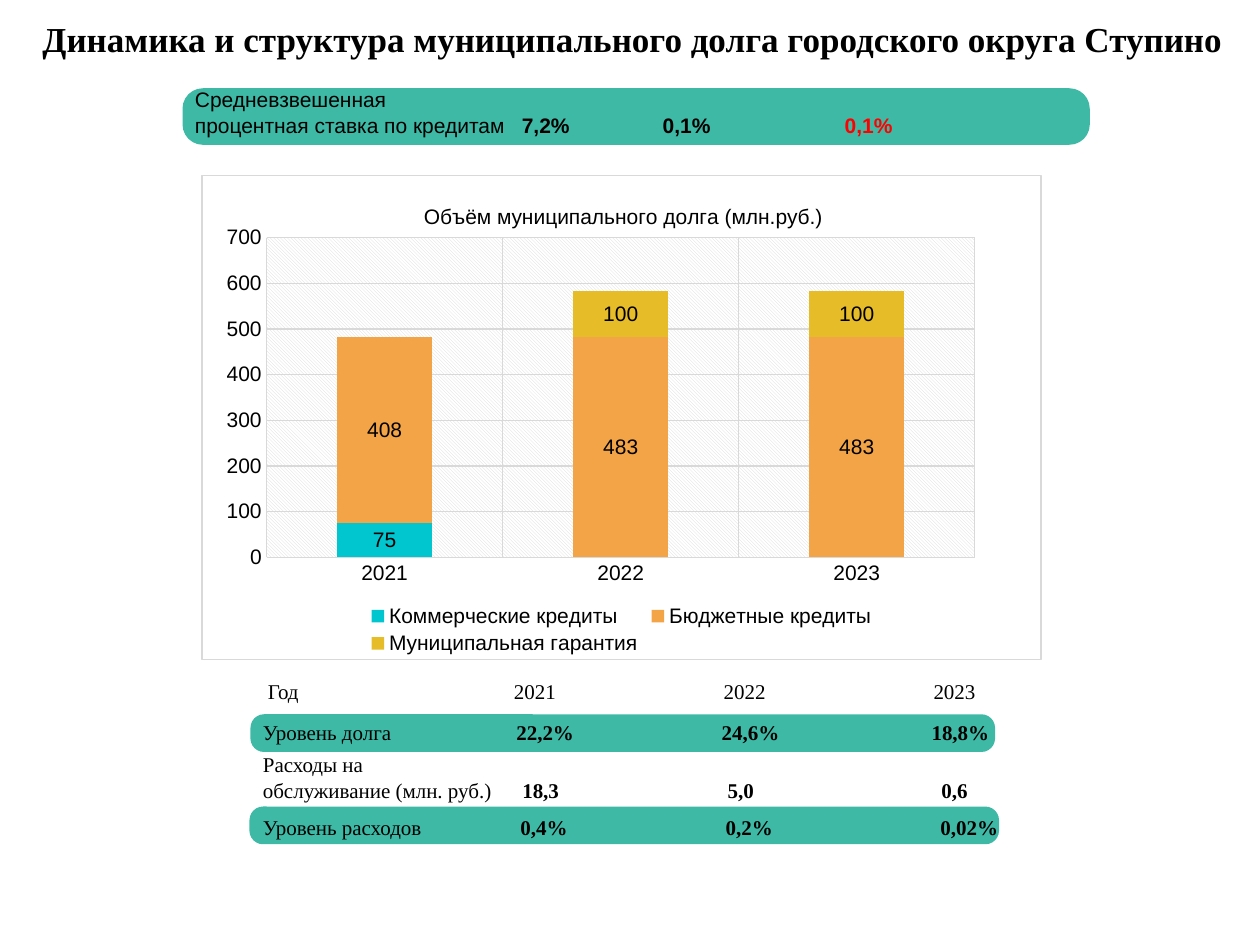
from lxml import etree
from pptx import Presentation
from pptx.chart.data import CategoryChartData
from pptx.dml.color import RGBColor
from pptx.enum.chart import XL_CHART_TYPE, XL_LABEL_POSITION, XL_LEGEND_POSITION, XL_TICK_MARK
from pptx.enum.shapes import MSO_SHAPE
from pptx.enum.text import MSO_AUTO_SIZE, PP_ALIGN
from pptx.oxml import parse_xml
from pptx.oxml.ns import nsdecls, qn
from pptx.util import Cm, Pt

STACKED = XL_CHART_TYPE.COLUMN_STACKED
LABEL_CENTER = XL_LABEL_POSITION.CENTER
LEGEND_BOTTOM = XL_LEGEND_POSITION.BOTTOM
NO_TICK = XL_TICK_MARK.NONE
ROUNDED = MSO_SHAPE.ROUNDED_RECTANGLE
GROW = MSO_AUTO_SIZE.SHAPE_TO_FIT_TEXT
CENTER = PP_ALIGN.CENTER

COLORS = {
    "text": "000000",
    "accent": "FF0000",
    "band": "3EB9A5",
    "paper": "FFFFFF",
    "grid": "D9D9D9",
    "commercial": "01C5CF",
    "budget": "F3A447",
    "guarantee": "E7BC29",
}
SANS = "Arial"
SERIF = "Times New Roman"


def color(name):
    return RGBColor.from_string(COLORS[name])


class DebtSlide:
    """Builds the elements of one slide in a shared style."""

    def __init__(self, presentation):
        self.slide = presentation.slides.add_slide(presentation.slide_layouts[6])
        self.shapes = self.slide.shapes

    def start_group(self):
        self.shapes = self.slide.shapes.add_group_shape().shapes

    def end_group(self):
        self.shapes = self.slide.shapes

    def style_font(self, font, name, size=12, bold=False, tone="text"):
        font.name = name
        font.size = Pt(size)
        font.bold = bold
        font.color.rgb = color(tone)

    def band(self, left, top, width, height):
        shape = self.shapes.add_shape(ROUNDED, Cm(left), Cm(top), Cm(width), Cm(height))
        shape.adjustments[0] = 0.36
        shape.shadow.inherit = False
        shape.fill.solid()
        shape.fill.fore_color.rgb = color("band")
        shape.line.fill.background()

    def text(self, left, top, width, height, rows, font_name, size=12, alignment=None):
        box = self.shapes.add_textbox(Cm(left), Cm(top), Cm(width), Cm(height))
        frame = box.text_frame
        frame.word_wrap = True
        frame.auto_size = GROW
        for index, (runs, stops, space) in enumerate(rows):
            paragraph = frame.paragraphs[0] if index == 0 else frame.add_paragraph()
            if stops:
                tabs = etree.SubElement(paragraph._p.get_or_add_pPr(), qn("a:tabLst"))
                for stop in stops:
                    etree.SubElement(tabs, qn("a:tab"), pos=str(int(Cm(stop))), algn="l")
            if space:
                paragraph.space_before = Pt(space)
            paragraph.alignment = alignment
            for content, bold, tone in runs:
                run = paragraph.add_run()
                run.text = content
                self.style_font(run.font, font_name, size, bold, tone)

    def set_layout(self, parent, **places):
        for old in parent.findall(qn("c:layout")):
            parent.remove(old)
        layout = parse_xml(f"<c:layout {nsdecls('c')}><c:manualLayout/></c:layout>")
        for tag, value in places.items():
            etree.SubElement(layout[0], qn(f"c:{tag}"), val=str(value))
        text = parent.find(qn("c:tx"))
        parent.insert(0 if text is None else 1, layout)

    def fill_areas(self, chart):
        chart_space = chart._chartSpace
        area = parse_xml(
            f"<c:spPr {nsdecls('c', 'a')}>"
            f"<a:solidFill><a:srgbClr val='{COLORS['paper']}'/></a:solidFill>"
            f"<a:ln w='9525'><a:solidFill><a:srgbClr val='{COLORS['grid']}'/></a:solidFill></a:ln>"
            "</c:spPr>"
        )
        chart_space.find(qn("c:chart")).addnext(area)
        plot = parse_xml(
            f"<c:spPr {nsdecls('c', 'a')}><a:pattFill prst='ltDnDiag'>"
            f"<a:fgClr><a:srgbClr val='{COLORS['grid']}'/></a:fgClr>"
            f"<a:bgClr><a:srgbClr val='{COLORS['paper']}'/></a:bgClr>"
            "</a:pattFill></c:spPr>"
        )
        plot_area = chart_space.find(".//" + qn("c:plotArea"))
        plot_area.append(plot)
        self.set_layout(plot_area, layoutTarget="inner", xMode="edge", yMode="edge",
                        x=0.077, y=0.128, w=0.844, h=0.661)

    def chart(self, left, top, width, height, title, categories, series):
        data = CategoryChartData(number_format="0")
        data.categories = categories
        for name, values, _ in series:
            data.add_series(name, values)
        frame = self.shapes.add_chart(STACKED, Cm(left), Cm(top), Cm(width), Cm(height), data)
        chart = frame.chart
        self.style_font(chart.font, SANS)
        chart.has_title = True
        run = chart.chart_title.text_frame.paragraphs[0].add_run()
        run.text = title
        self.style_font(run.font, SANS)
        self.set_layout(chart.chart_title._element, xMode="edge", yMode="edge", x=0.26, y=0.05)
        chart.has_legend = True
        chart.legend.position = LEGEND_BOTTOM
        chart.legend.include_in_layout = False
        self.style_font(chart.legend.font, SANS)
        for axis in (chart.category_axis, chart.value_axis):
            axis.has_major_gridlines = True
            axis.major_tick_mark = NO_TICK
            axis.minor_tick_mark = NO_TICK
            self.style_font(axis.tick_labels.font, SANS)
            for line in (axis.format.line, axis.major_gridlines.format.line):
                line.color.rgb = color("grid")
                line.width = Pt(0.75)
        plot = chart.plots[0]
        plot.gap_width = 150
        plot.overlap = 100
        plot.vary_by_categories = False
        for item, (_, _, tone) in zip(plot.series, series):
            item.format.fill.solid()
            item.format.fill.fore_color.rgb = color(tone)
            labels = item.data_labels
            labels.show_value = True
            labels.position = LABEL_CENTER
            self.style_font(labels.font, SANS)
        self.fill_areas(chart)


def plain(content):
    return (content, False, "text")


def bold(content, tone="text"):
    return (content, True, tone)


def main():
    presentation = Presentation()
    presentation.slide_width = Cm(25.4)
    presentation.slide_height = Cm(19.05)
    slide = DebtSlide(presentation)

    slide.start_group()
    slide.band(3.68, 1.78, 18.29, 1.14)
    rate_rows = [
        ([plain("Средневзвешенная")], [], 0),
        ([plain("процентная ставка по кредитам"), bold("\t7,2%\t0,1%"), bold("\t0,1%", "accent")],
         [6.59, 9.43, 13.1], 0),
    ]
    slide.text(3.68, 1.63, 17.96, 1.27, rate_rows, SANS)

    slide.start_group()
    slide.band(5.03, 16.26, 15.11, 0.76)
    slide.band(5.05, 14.4, 15.01, 0.76)
    level_rows = [
        ([plain("\tГод\t2021\t2022\t2023")], [0.1, 5.06, 9.29, 13.52], 0),
        ([plain("Уровень долга"), bold("\t22,2%\t24,6%\t18,8%")], [5.11, 9.25, 13.48], 9),
        ([plain("Расходы на")], [], 4),
        ([plain("обслуживание (млн. руб.)"), bold("\t18,3\t5,0\t0,6")], [5.23, 9.37, 13.68], 0),
        ([plain("Уровень расходов"), bold("\t0,4%\t0,2%\t0,02%")], [5.19, 9.33, 13.66], 7),
    ]
    slide.text(5.05, 13.56, 16.59, 3.45, level_rows, SERIF)
    slide.end_group()

    title = "Динамика и структура муниципального долга городского округа Ступино"
    slide.text(0.05, 0.23, 25.4, 1.12, [([bold(title)], [], 0)], SERIF, 20, CENTER)

    slide.chart(
        4.06, 3.53, 16.94, 9.78, "Объём муниципального долга (млн.руб.)",
        ["2021", "2022", "2023"],
        [
            ("Коммерческие кредиты", (75, None, None), "commercial"),
            ("Бюджетные кредиты", (408, 483, 483), "budget"),
            ("Муниципальная гарантия", (None, 100, 100), "guarantee"),
        ],
    )
    presentation.save("out.pptx")


if __name__ == "__main__":
    main()
